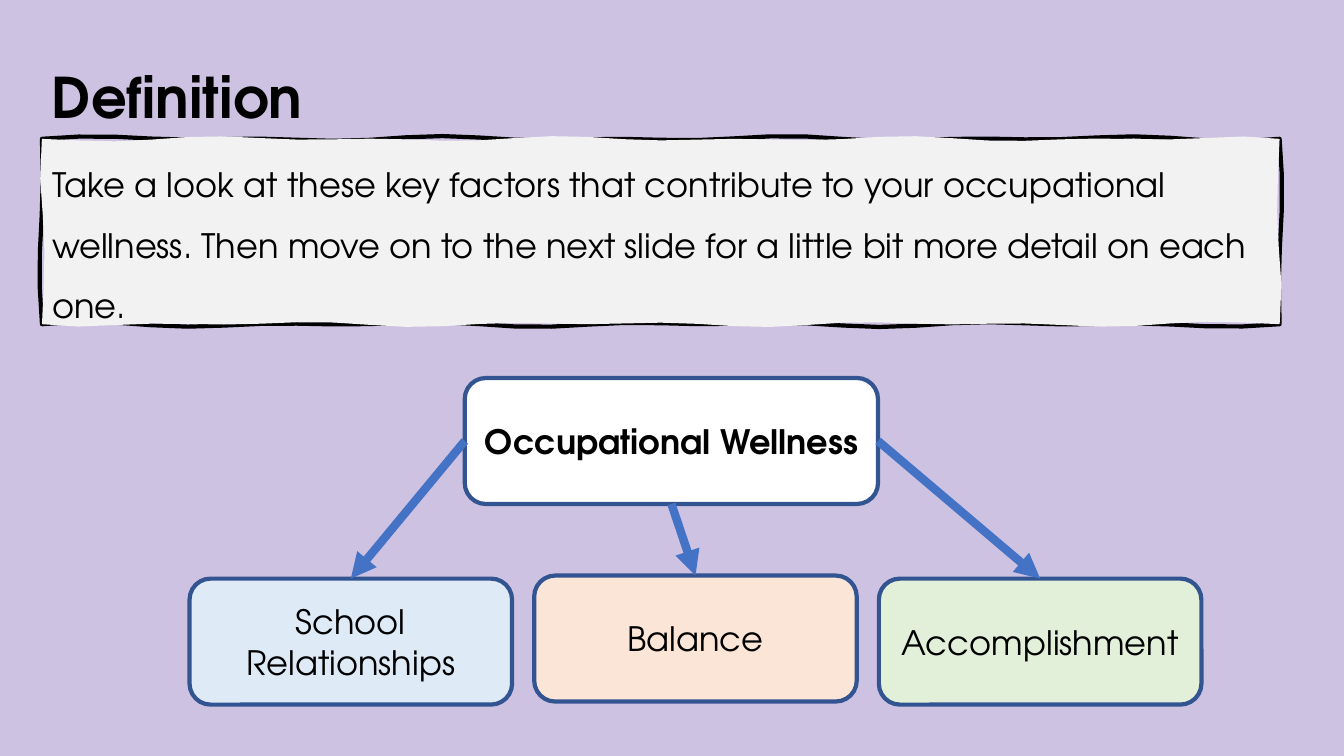
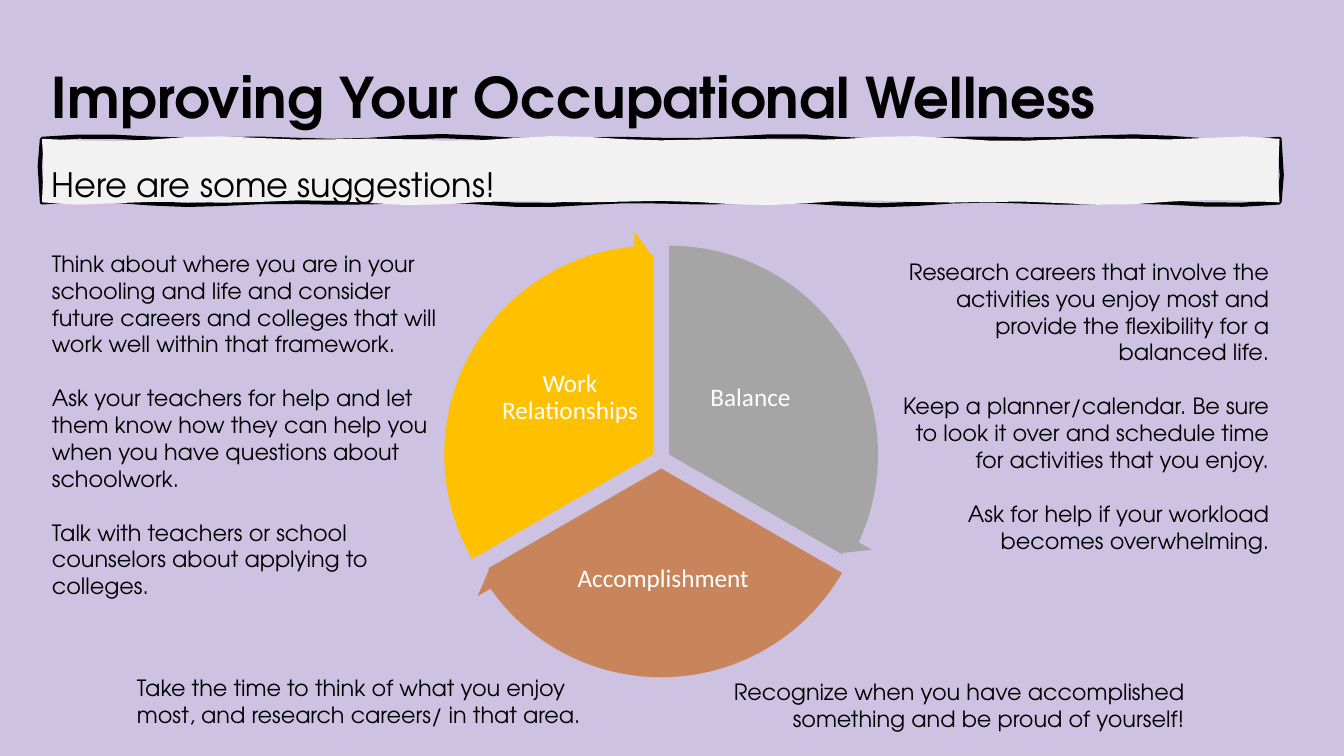
import math
from dataclasses import dataclass

from lxml import etree
from pptx import Presentation
from pptx.dml.color import RGBColor
from pptx.enum import shapes, text
from pptx.oxml import ns
from pptx.util import Pt


@dataclass(frozen=True)
class Theme:
    background: str = "CEC2E2"
    ink: str = "000000"
    white: str = "FFFFFF"
    band: str = "F2F2F2"
    box_line: str = "325491"
    arrow: str = "4472C4"
    blue: str = "DEEBF7"
    peach: str = "FBE5D6"
    green: str = "E2F0D9"
    gray: str = "A5A5A5"
    brown: str = "C8855C"
    gold: str = "FFC000"
    font: str = "TeX Gyre Adventor"
    label_font: str = "Calibri"
    title_size: int = 40
    lead_size: int = 24
    label_size: int = 18
    note_size: int = 16


THEME = Theme()
ALIGN = text.PP_ALIGN
ANCHOR = text.MSO_ANCHOR
SHAPE = shapes.MSO_SHAPE
MARGIN = 30
BAND_TOP, BAND_WIDTH = 99.2, 884
WAVE_STEP = 26


def write(shape, *paragraphs, size, font=THEME.font, color=THEME.ink, bold=False,
          align=ALIGN.LEFT, anchor=ANCHOR.TOP, spacing=1.0, gap=0, inset=None):
    """Fill a shape with paragraphs that share one format."""
    frame = shape.text_frame
    frame.word_wrap = True
    frame.vertical_anchor = anchor
    if inset is not None:
        frame.margin_left = frame.margin_right = Pt(inset)
        frame.margin_top = frame.margin_bottom = Pt(inset)
    for index, content in enumerate(paragraphs):
        paragraph = frame.add_paragraph() if index else frame.paragraphs[0]
        paragraph.alignment = align
        paragraph.line_spacing = spacing
        paragraph.space_before = Pt(gap if index else 0)
        run = paragraph.add_run()
        run.text = content
        run.font.name = font
        run.font.size = Pt(size)
        run.font.bold = bold
        run.font.color.rgb = RGBColor.from_string(color)


def add_wavy_band(slide, height, phase):
    """Add a rectangle whose edges waver; the phase varies the waves."""
    right, bottom = MARGIN + BAND_WIDTH, BAND_TOP + height
    edges = [
        (MARGIN, BAND_TOP, 1, 0, BAND_WIDTH),
        (right, BAND_TOP, 0, 1, height),
        (right, bottom, -1, 0, BAND_WIDTH),
        (MARGIN, bottom, 0, -1, height),
    ]
    points = []
    for left, top, step_x, step_y, length in edges:
        for distance in range(0, int(length), WAVE_STEP):
            taper = min(1, distance / 20, (length - distance) / 20)
            wave = taper * (math.sin(distance / 20 + phase)
                            + math.sin(distance / 37 + 2 * phase))
            points.append((Pt(left + step_x * distance + step_y * wave),
                           Pt(top + step_y * distance - step_x * wave)))
    builder = slide.shapes.build_freeform(*points[0])
    builder.add_line_segments(points[1:], close=True)
    band = builder.convert_to_shape()
    band.shadow.inherit = False
    return band


presentation = Presentation()
presentation.slide_width, presentation.slide_height = Pt(960), Pt(540)
backdrop = presentation.slide_master.background.fill
backdrop.solid()
backdrop.fore_color.rgb = RGBColor.from_string(THEME.background)

# Title and band on every slide
headers = [
    ("Definition", 132.4,
     "Take a look at these key factors that contribute to your occupational wellness. "
     "Then move on to the next slide for a little bit more detail on each one."),
    ("Improving Your Occupational Wellness", 45.4, "Here are some suggestions!"),
]
slides = []
for title, band_height, lead in headers:
    slide = presentation.slides.add_slide(presentation.slide_layouts[6])
    slides.append(slide)
    title_box = slide.shapes.add_textbox(Pt(MARGIN), Pt(41), Pt(820), Pt(55.5))
    write(title_box, title, size=THEME.title_size, bold=True)

    edge = add_wavy_band(slide, band_height, phase=0)
    edge.fill.background()
    edge.line.color.rgb = RGBColor.from_string(THEME.ink)
    edge.line.width = Pt(3)

    band = add_wavy_band(slide, band_height, phase=2)
    band.fill.solid()
    band.fill.fore_color.rgb = RGBColor.from_string(THEME.band)
    band.line.fill.background()
    write(band, lead, size=THEME.lead_size, spacing=1.5)
    band.text_frame.margin_left = Pt(MARGIN + 7.2) - band.left
    band.text_frame.margin_top = Pt(BAND_TOP + 3.6) - band.top

definition, improving = slides

# Definition: one topic and its three factors
boxes = [
    ("Occupational Wellness", 332, 270, 295.2, THEME.white, True),
    ("School Relationships", 135.4, 413.3, 230.4, THEME.blue, False),
    ("Balance", 381.6, 411.1, 230.4, THEME.peach, False),
    ("Accomplishment", 627.8, 413.3, 230.4, THEME.green, False),
]
nodes = []
for label, left, top, width, color, bold in boxes:
    node = definition.shapes.add_shape(
        SHAPE.ROUNDED_RECTANGLE, Pt(left), Pt(top), Pt(width), Pt(90))
    node.shadow.inherit = False
    node.fill.solid()
    node.fill.fore_color.rgb = RGBColor.from_string(color)
    node.line.color.rgb = RGBColor.from_string(THEME.box_line)
    node.line.width = Pt(3)
    write(node, label, size=THEME.lead_size, bold=bold,
          align=ALIGN.CENTER, anchor=ANCHOR.MIDDLE)
    nodes.append(node)

topic, *factors = nodes
TOP_SITE, LEFT_SITE, BOTTOM_SITE, RIGHT_SITE = range(4)
for factor, site in zip(factors, (LEFT_SITE, BOTTOM_SITE, RIGHT_SITE)):
    arrow = definition.shapes.add_connector(shapes.MSO_CONNECTOR.STRAIGHT, 0, 0, 0, 0)
    arrow.begin_connect(topic, site)
    arrow.end_connect(factor, TOP_SITE)
    arrow.line.color.rgb = RGBColor.from_string(THEME.arrow)
    arrow.line.width = Pt(6)
    etree.SubElement(arrow.line._get_or_add_ln(), ns.qn("a:tailEnd"), type="triangle")
    etree.SubElement(arrow._element.spPr, ns.qn("a:effectLst"))

# Improving: a cycle of three slices, each moved out from the hub.
# Adjustments hold angles in units of 5/3 degree, so a full turn is 216.
HUB_X, HUB_Y, OFFSET = 472.3, 328, 6.65
PIE_SIZE, ARROW_SIZE = 285.1, 319.7
THIRD, TURN, HEAD = 72, 216, 3.275
slices = [
    ("Balance", THEME.gray, (485.3, 241.9, 101.5, 85)),
    ("Accomplishment", THEME.brown, (397.4, 376.6, 152.6, 74.9)),
    ("Work Relationships", THEME.gold, (356.4, 241.9, 101.5, 85)),
]
for index, (label, color, label_area) in enumerate(slices):
    start = (162 + index * THIRD) % TURN
    end = (start + THIRD) % TURN
    middle = math.radians(-30 + 120 * index)
    center_x = HUB_X + OFFSET * math.cos(middle)
    center_y = HUB_Y + OFFSET * math.sin(middle)
    parts = [
        (SHAPE.PIE, PIE_SIZE, (start, end)),
        (SHAPE.CIRCULAR_ARROW, ARROW_SIZE, (0.051, HEAD, end - HEAD, start, 0.059)),
    ]
    for kind, size, adjustments in parts:
        part = improving.shapes.add_shape(
            kind, Pt(center_x - size / 2), Pt(center_y - size / 2), Pt(size), Pt(size))
        part.shadow.inherit = False
        part.fill.solid()
        part.fill.fore_color.rgb = RGBColor.from_string(color)
        part.line.fill.background()
        for position, value in enumerate(adjustments):
            part.adjustments[position] = value
    label_box = improving.shapes.add_textbox(*map(Pt, label_area))
    write(label_box, label, size=THEME.label_size, font=THEME.label_font,
          color=THEME.white, align=ALIGN.CENTER, anchor=ANCHOR.MIDDLE,
          spacing=0.9, inset=2)

# Suggestions around the cycle
suggestions = [
    ((MARGIN, 175, 297.4, 259), ALIGN.LEFT, [
        "Think about where you are in your schooling and life and consider future "
        "careers and colleges that will work well within that framework.",
        "Ask your teachers for help and let them know how they can help you when "
        "you have questions about schoolwork.",
        "Talk with teachers or school counselors about applying to colleges.",
    ]),
    ((632.2, 180.7, 281.5, 220), ALIGN.RIGHT, [
        "Research careers that involve the activities you enjoy most and provide "
        "the flexibility for a balanced life.",
        "Keep a planner/calendar. Be sure to look it over and schedule time for "
        "activities that you enjoy.",
        "Ask for help if your workload becomes overwhelming.",
    ]),
    ((90.7, 478, 365, 46), ALIGN.LEFT, [
        "Take the time to think of what you enjoy most, and research careers/ in that area.",
    ]),
    ((513.4, 481, 339.8, 46), ALIGN.RIGHT, [
        "Recognize when you have accomplished something and be proud of yourself!",
    ]),
]
for area, align, paragraphs in suggestions:
    note = improving.shapes.add_textbox(*map(Pt, area))
    write(note, *paragraphs, size=THEME.note_size, align=align, gap=19.2)

presentation.save("out.pptx")
